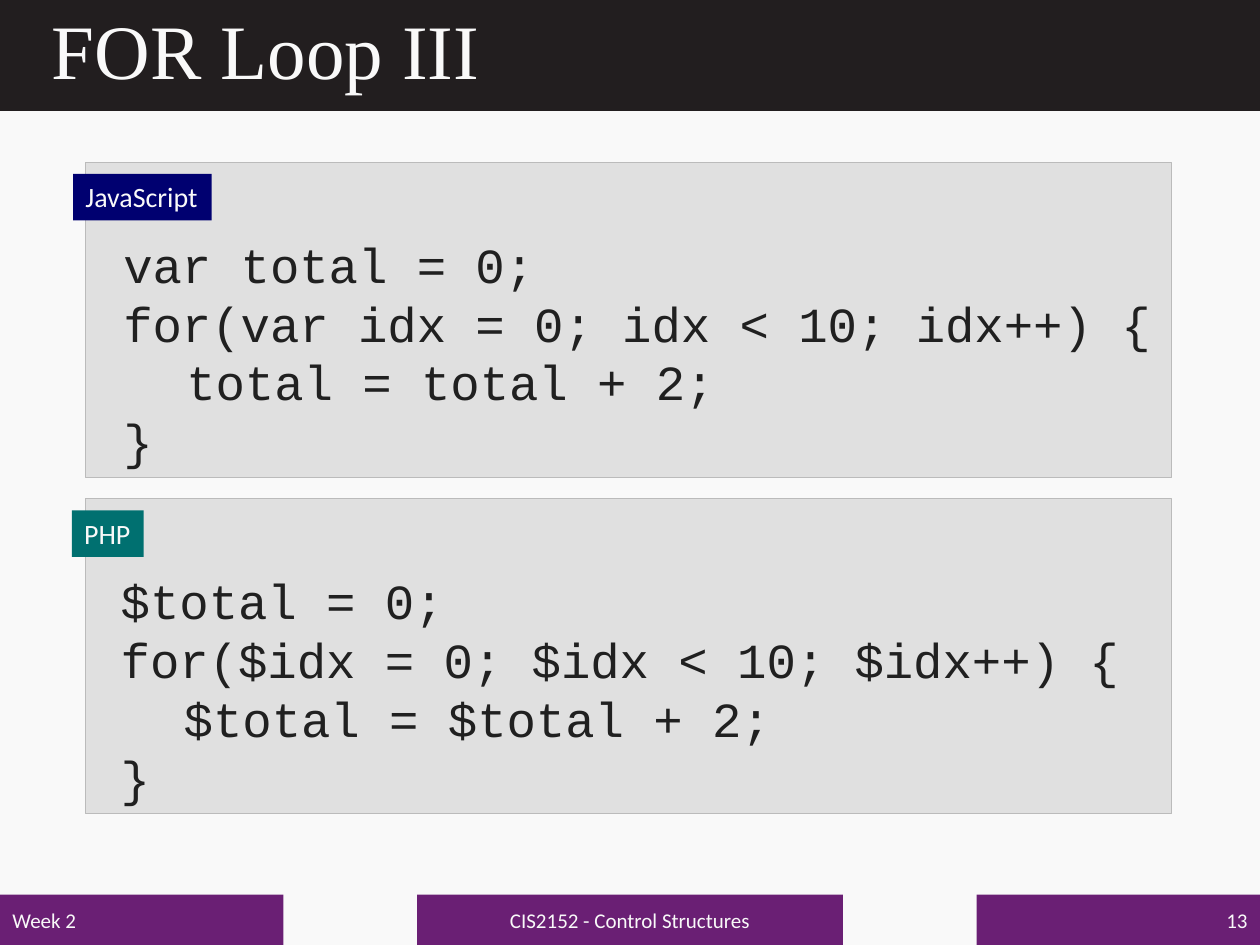
from pptx import Presentation
from pptx.dml.color import RGBColor
from pptx.enum.shapes import MSO_SHAPE
from pptx.enum.text import MSO_ANCHOR, MSO_AUTO_SIZE, PP_ALIGN
from pptx.util import Inches, Pt

RECTANGLE = MSO_SHAPE.RECTANGLE
MIDDLE, TOP = MSO_ANCHOR.MIDDLE, MSO_ANCHOR.TOP
FIT_SHAPE, NO_FIT = MSO_AUTO_SIZE.SHAPE_TO_FIT_TEXT, MSO_AUTO_SIZE.NONE
LEFT, CENTER, RIGHT = PP_ALIGN.LEFT, PP_ALIGN.CENTER, PP_ALIGN.RIGHT
TITLE_ONLY = 5

PAPER, INK = "F9F9F9", "202020"
BAR, FOOTER = "221E1F", "6A1F74"
PANEL, PANEL_EDGE = "E0E0E0", "BBBBBB"
NAVY, TEAL = "000070", "007070"

JAVASCRIPT_CODE = [
    "var total = 0;",
    "for(var idx = 0; idx < 10; idx++) {",
    "\ttotal = total + 2;",
    "}",
]
PHP_CODE = [
    "$total = 0;",
    "for($idx = 0; $idx < 10; $idx++) {",
    "\t$total = $total + 2;",
    "}",
]


def rgb(hex_color):
    return RGBColor.from_string(hex_color)


def inches(box):
    return [Inches(value) for value in box]


def write(frame, lines, font_name, size, color, align=LEFT):
    """Write one paragraph per line, all in the same font."""
    for index, line in enumerate(lines):
        paragraph = frame.paragraphs[0] if index == 0 else frame.add_paragraph()
        paragraph.text = line
        paragraph.alignment = align
        paragraph.font.name = font_name
        paragraph.font.size = Pt(size)
        paragraph.font.color.rgb = rgb(color)


def set_frame(frame, anchor, wrap, auto_size):
    frame.vertical_anchor = anchor
    frame.word_wrap = wrap
    frame.auto_size = auto_size


def add_block(slide, box, fill, edge=None):
    block = slide.shapes.add_shape(RECTANGLE, *inches(box))
    block.shadow.inherit = False
    block.fill.solid()
    block.fill.fore_color.rgb = rgb(fill)
    if edge:
        block.line.color.rgb = rgb(edge)
        block.line.width = Pt(0.5)
    else:
        block.line.fill.background()
    return block


def add_title(slide, text):
    add_block(slide, (0, 0, 10, 0.88), BAR)
    title = slide.shapes.title
    title.left, title.top, title.width, title.height = inches((0.31, 0, 9.39, 0.86))
    set_frame(title.text_frame, MIDDLE, True, NO_FIT)
    write(title.text_frame, [text], "Times New Roman", 44, PAPER)
    title.text_frame.paragraphs[0].line_spacing = 0.9
    # Bring the title in front of its bar
    slide.shapes._spTree.append(title._element)


def add_footer(slide, left, width, text, align):
    footer = add_block(slide, (left, 7.1, width, 0.4), FOOTER)
    set_frame(footer.text_frame, MIDDLE, True, NO_FIT)
    write(footer.text_frame, [text], "Calibri", 12, PAPER, align)


def add_code_panel(slide, top, language, tag_color, tag_left, tag_width,
                   code, code_left, code_width):
    add_block(slide, (0.68, top, 8.62, 2.5), PANEL, PANEL_EDGE)

    # Code listing
    listing = slide.shapes.add_textbox(
        *inches((code_left, top + 0.52, code_width, 1.99)))
    set_frame(listing.text_frame, TOP, False, FIT_SHAPE)
    write(listing.text_frame, code, "Courier New", 28, INK)

    # Language tag
    tag = add_block(slide, (tag_left, top + 0.09, tag_width, 0.37), tag_color)
    set_frame(tag.text_frame, TOP, False, FIT_SHAPE)
    write(tag.text_frame, [language], "Calibri", 16, PAPER)


def main():
    presentation = Presentation()
    presentation.slide_width, presentation.slide_height = Inches(10), Inches(7.5)
    slide = presentation.slides.add_slide(presentation.slide_layouts[TITLE_ONLY])
    slide.background.fill.solid()
    slide.background.fill.fore_color.rgb = rgb(PAPER)

    add_title(slide, "FOR Loop III")

    add_footer(slide, 0, 2.25, "Week 2", LEFT)
    add_footer(slide, 3.31, 3.38, "CIS2152 - Control Structures", CENTER)
    add_footer(slide, 7.75, 2.25, "13", RIGHT)

    add_code_panel(slide, 1.29, "JavaScript", NAVY, 0.58, 1.1,
                   JAVASCRIPT_CODE, 0.88, 8.42)
    add_code_panel(slide, 3.96, "PHP", TEAL, 0.57, 0.57,
                   PHP_CODE, 0.86, 8.19)

    presentation.save("out.pptx")


if __name__ == "__main__":
    main()
